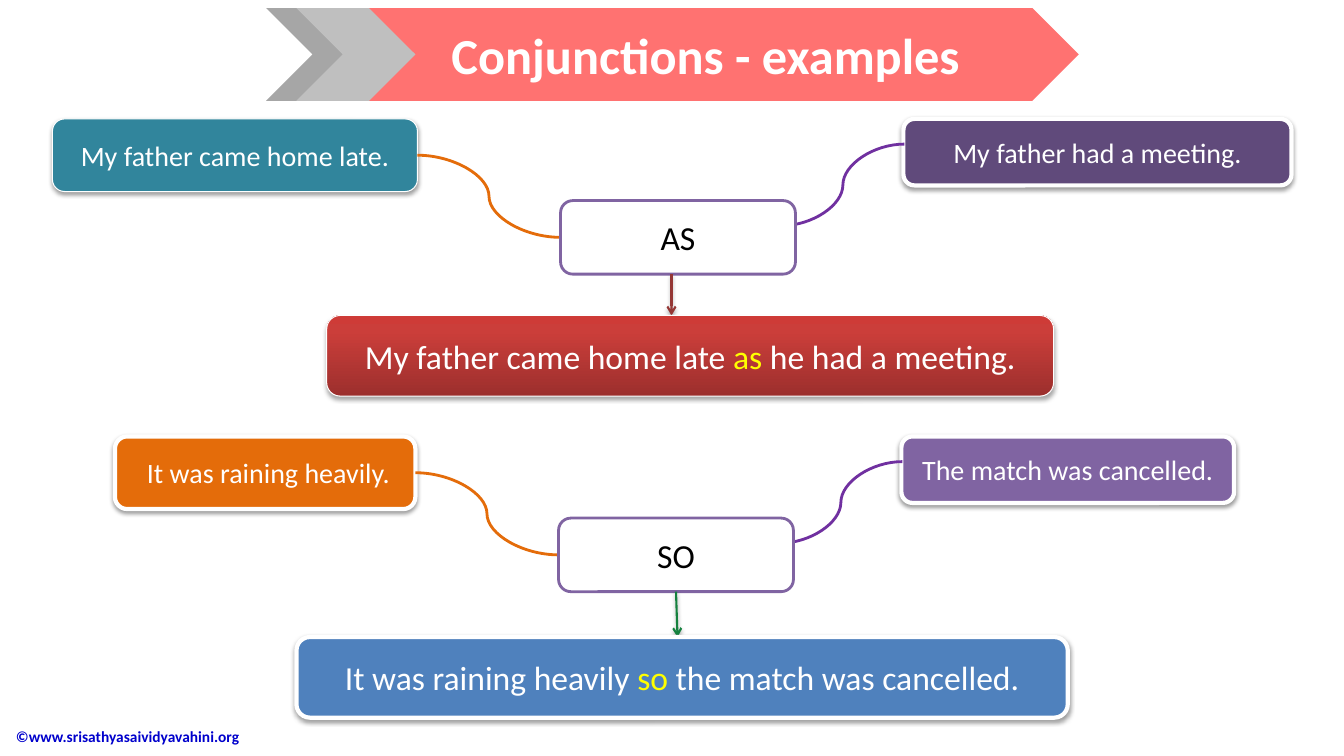
import copy

import lxml.etree
import pptx
import pptx.dml.color
import pptx.enum.shapes
import pptx.enum.text
import pptx.oxml.ns
import pptx.util

SHAPES = pptx.enum.shapes.MSO_SHAPE
CONNECTORS = pptx.enum.shapes.MSO_CONNECTOR
ALIGN = pptx.enum.text.PP_ALIGN
qn = pptx.oxml.ns.qn

WHITE, BLACK, YELLOW = "FFFFFF", "000000", "FFFF00"
ORANGE, VIOLET, LILAC = "E46C0A", "7030A0", "8064A2"
RED_GRADIENT = [(0, "9C2F2D"), (0.8, "CB3E3A"), (1, "CE3B37")]
# Shadow opacity in percent and distance in points
SOFT, DEEP = (38, 1.6), (35, 1.8)


def px(count):
    """Turn px (100 to the inch) into EMU."""
    return pptx.util.Emu(count * 9144)


def color(code):
    return pptx.dml.color.RGBColor.from_string(code)


class SlideBuilder:
    font = "Calibri"

    def __init__(self, slide):
        self.shapes = slide.shapes

    def add_runs(self, shape, runs, size, bold=False, align=ALIGN.CENTER):
        """Fill a shape with one paragraph of (text, colour) runs."""
        frame = shape.text_frame
        frame.word_wrap = True
        frame.vertical_anchor = pptx.enum.text.MSO_ANCHOR.MIDDLE
        para = frame.paragraphs[0]
        para.alignment = align
        for text, code in runs:
            span = para.add_run()
            span.text = text
            span.font.name = self.font
            span.font.size = pptx.util.Pt(size)
            span.font.bold = bold
            span.font.color.rgb = color(code)

    def add_shadow(self, effects, shadow):
        opacity, distance = shadow
        outer = lxml.etree.SubElement(
            effects, qn("a:outerShdw"), blurRad=str(pptx.util.Pt(3.1)),
            dist=str(pptx.util.Pt(distance)), dir="5400000", rotWithShape="0")
        black = lxml.etree.SubElement(outer, qn("a:srgbClr"), val=BLACK)
        lxml.etree.SubElement(black, qn("a:alpha"), val=str(opacity * 1000))

    def paint_gradient(self, shape, stops):
        """Paint the stops from the bottom edge upwards."""
        shape.fill.gradient()
        shape.fill.gradient_angle = 90
        stop_list = shape.element.spPr.find(".//" + qn("a:gsLst"))
        for _ in stops[2:]:
            stop_list.append(copy.deepcopy(stop_list[0]))
        for stop, (position, code) in zip(shape.fill.gradient_stops, stops):
            stop.position = position
            stop.color.rgb = color(code)

    def shape(self, kind, place, fill, line=None, shadow=None):
        """Add a preset shape; a list as fill means gradient stops."""
        shape = self.shapes.add_shape(kind, *map(px, place))
        if isinstance(fill, list):
            self.paint_gradient(shape, fill)
        else:
            shape.fill.solid()
            shape.fill.fore_color.rgb = color(fill)
        if line:
            code, width = line
            shape.line.color.rgb = color(code)
            shape.line.width = pptx.util.Pt(width)
        else:
            shape.line.fill.background()
        shape.shadow.inherit = False
        if shadow:
            self.add_shadow(shape.element.spPr.find(qn("a:effectLst")), shadow)
        return shape

    def box(self, place, runs, size, fill, line=(WHITE, 3), shadow=SOFT):
        box = self.shape(SHAPES.ROUNDED_RECTANGLE, place, fill, line, shadow)
        self.add_runs(box, runs, size)
        return box

    def connector(self, kind, start, end, code, width, shadow=None):
        link = self.shapes.add_connector(kind, *map(px, start + end))
        link.line.color.rgb = color(code)
        link.line.width = pptx.util.Pt(width)
        effects = lxml.etree.SubElement(link.element.spPr, qn("a:effectLst"))
        if shadow:
            self.add_shadow(effects, shadow)
        return link

    def curve(self, start, end, code):
        return self.connector(CONNECTORS.CURVE, start, end, code, 2)

    def arrow(self, start, end, code):
        arrow = self.connector(CONNECTORS.STRAIGHT, start, end, code, 1.5, DEEP)
        outline = arrow.element.spPr.find(qn("a:ln"))
        lxml.etree.SubElement(outline, qn("a:tailEnd"), type="arrow")
        return arrow

    def text(self, place, runs, size, bold=False):
        box = self.shapes.add_textbox(*map(px, place))
        self.add_runs(box, runs, size, bold, ALIGN.LEFT)

    def join(self, left, top, word, first, second):
        """Draw two clauses joined by a conjunction box at left, top."""
        middle = top + 36
        first_clause = self.box(**first)
        first_curve = self.curve((left - 142, top - 45), (left, middle), ORANGE)
        self.box(**second)
        self.curve((left + 219, top + 25), (left + 341, top - 56), VIOLET)
        conjunction = self.box((left, top, 233, 73), [(word, BLACK)], 24,
                               WHITE, (LILAC, 2), None)
        first_curve.begin_connect(first_clause, 3)
        first_curve.end_connect(conjunction, 1)
        return conjunction


def clause(place, text, fill, line_width=3):
    return {"place": place, "runs": [(text, WHITE)], "size": 20,
            "fill": fill, "line": (WHITE, line_width)}


def main():
    deck = pptx.Presentation()
    deck.slide_width, deck.slide_height = px(1333), px(750)
    page = SlideBuilder(deck.slides.add_slide(deck.slide_layouts[6]))

    page.text((6, 710, 353, 41),
              [("©www.srisathyasaividyavahini.org", "0000CC")], 11, True)

    page.join(556, 199, "AS",
              clause((52, 118, 362, 72), "My father came home late.", "31859C", 0.75),
              clause((896, 118, 385, 66), "My father had a meeting.", "604A7B"))
    page.arrow((666, 272), (666, 313), "953735")
    page.box((324, 313, 721, 80),
             [("My father came home late ", WHITE), ("as", YELLOW),
              (" he had a meeting.", WHITE)],
             24, RED_GRADIENT, (WHITE, 0.75), DEEP)

    so_box = page.join(554, 514, "SO",
                       clause((114, 433, 298, 72), " It was raining heavily.", ORANGE),
                       clause((894, 433, 330, 66), "The match was cancelled.", LILAC))
    so_arrow = page.arrow((670, 587), (672, 632), "15813E")
    so_arrow.begin_connect(so_box, 2)
    page.box((294, 632, 765, 80),
             [("It was raining heavily ", WHITE), ("so", YELLOW),
              (" the match was cancelled.", WHITE)],
             24, "4F81BD")

    page.shape(SHAPES.CHEVRON, (264, 8, 118, 92), "A6A6A6")
    title = page.shape(SHAPES.PENTAGON, (353, 8, 717, 92), "FF7271")
    page.add_runs(title, [("Conjunctions - examples", WHITE)], 36, True)
    page.shape(SHAPES.CHEVRON, (294, 8, 118, 92), "BFBFBF")

    deck.save("out.pptx")


if __name__ == "__main__":
    main()
